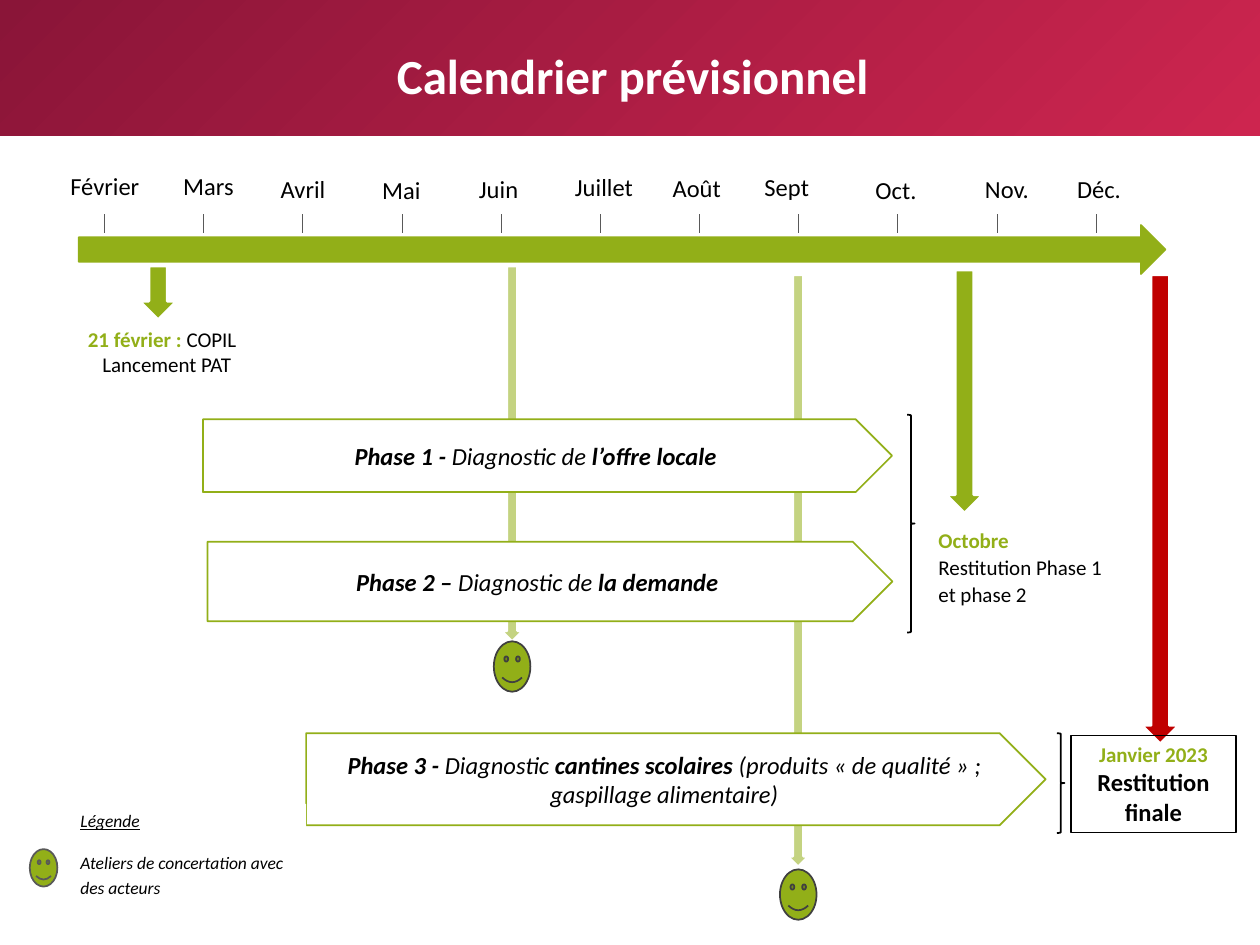
"""Build the project calendar slide with its timeline, phases and milestones."""
from lxml.etree import SubElement
from pptx import Presentation
from pptx.dml.color import RGBColor
from pptx.enum.shapes import MSO_CONNECTOR, MSO_SHAPE
from pptx.enum.text import MSO_ANCHOR, PP_ALIGN
from pptx.oxml.ns import qn
from pptx.util import Pt

GREEN = RGBColor(0x92, 0xAF, 0x18)
RED = RGBColor(0xC0, 0x00, 0x00)
WINE = RGBColor(0x8A, 0x15, 0x38)
ROSE = RGBColor(0xCD, 0x25, 0x4F)
WHITE = RGBColor(0xFF, 0xFF, 0xFF)
BLACK = RGBColor(0x00, 0x00, 0x00)
DARK = RGBColor(0x40, 0x40, 0x40)
GREY = RGBColor(0x59, 0x59, 0x59)

LEFT, MID = PP_ALIGN.LEFT, PP_ALIGN.CENTER
BOLD, PLAIN = dict(bold=True), dict(bold=False)
STRONG, SOFT = dict(bold=True, italic=True), dict(italic=True)

MONTHS = [
    ("Février", 33.1, 94.3, 84.2), ("Mars", 97.2, 94.3, 43.9),
    ("Avril", 148.3, 95.8, 49.7), ("Mai", 203.8, 96.5, 51.1),
    ("Juin ", 257, 95.8, 59), ("Juillet ", 319, 95, 55.4),
    ("Août", 377.3, 95.5, 84.2), ("Sept", 429.8, 95, 84.2),
    ("Oct.", 493.2, 96.5, 84.2), ("Nov.", 555.8, 95.8, 84.2),
    ("Déc.", 608.4, 95.8, 84.2),
]
PHASES = [
    ((174.96, 419, 422.6, 52.6), [
        ("Phase 3 - ", STRONG), ("Diagnostic ", SOFT), ("cantines scolaires ", STRONG),
        ("(produits « de qualité » ; gaspillage alimentaire)", SOFT)]),
    ((116, 239.6, 393.8, 41.6), [
        ("Phase 1 - ", STRONG), ("Diagnostic de", SOFT), (" l’offre locale ", STRONG)]),
    ((118.6, 309.6, 391.4, 45.4), [
        ("Phase 2 – ", STRONG), ("Diagnostic de ", SOFT), ("la demande ", STRONG)]),
]
TRAILS = [(450, 157, 12.2, 338.4), (286.6, 152, 12.2, 214.6)]
DROPS = [(79.9, 152, 20.9, 30.6, GREEN), (540.7, 154.3, 20.9, 138.9, GREEN),
         (652.6, 157, 20.9, 268, RED)]
FACES = [(282.2, 366.5, 20.9, 28.8, DARK), (445.7, 496.8, 20.9, 28.8, DARK),
         (17, 485.2, 15.8, 21.4, GREY)]
BRACES = [(518.4, 237, 4.3, 124.4), (604, 419, 4.3, 57)]


def apply(target, values):
    """Set each named format value on the target."""
    for name, value in values.items():
        setattr(target, name, value)


def write(shape, paras, size, align=MID, anchor=MSO_ANCHOR.TOP):
    """Fill a shape with paragraphs given as lists of (text, format) runs."""
    frame = shape.text_frame
    apply(frame, dict(word_wrap=True, vertical_anchor=anchor))
    for place, runs in enumerate(paras):
        para = frame.add_paragraph() if place else frame.paragraphs[0]
        para.alignment = align
        for text, style in runs:
            if text == "\n":
                para.add_line_break()
                continue
            run = para.add_run()
            run.text = text
            values = dict(name="Calibri", size=Pt(size)) | style
            run.font.color.rgb = values.pop("color", BLACK)
            apply(run.font, values)
    return frame.paragraphs


def label(slide, box, paras, size, **extra):
    """Add a text box and return its paragraphs."""
    shape = slide.shapes.add_textbox(*map(Pt, box))
    return write(shape, paras, size, **extra)


def draw(slide, kind, box, fill=None, line=None, width=1):
    """Add a preset shape without a shadow."""
    shape = slide.shapes.add_shape(kind, *map(Pt, box))
    shape.shadow.inherit = False
    if fill is None:
        shape.fill.background()
    else:
        shape.fill.solid()
        shape.fill.fore_color.rgb = fill
    if line is None:
        shape.line.fill.background()
    else:
        shape.line.color.rgb = line
        shape.line.width = Pt(width)
    return shape


def banner(slide):
    """Add the gradient band at the top."""
    band = draw(slide, MSO_SHAPE.RECTANGLE, (0, 0, 720, 77.4))
    band.fill.gradient()
    band.fill.gradient_angle = 315
    for stop, place, color in zip(band.fill.gradient_stops, (0, 1), (WINE, ROSE)):
        stop.position = place
        stop.color.rgb = color


def trail(slide, box):
    """Add a pale translucent arrow."""
    shape = draw(slide, MSO_SHAPE.DOWN_ARROW, box, GREEN, WHITE, 1.5)
    color = shape.fill._xPr.find(qn("a:solidFill"))[0]
    SubElement(color, qn("a:alpha"), val="54000")


def tick(slide, left):
    """Add a month mark above the timeline."""
    line = slide.shapes.add_connector(
        MSO_CONNECTOR.STRAIGHT, Pt(left), Pt(122.4), Pt(left), Pt(133.2))
    line.line.color.rgb = GREY
    line.line.width = Pt(0.5)
    SubElement(line._element.spPr, qn("a:effectLst"))


def main():
    """Build and save the slide."""
    deck = Presentation()
    apply(deck, dict(slide_width=Pt(720), slide_height=Pt(540)))
    slide = deck.slides.add_slide(deck.slide_layouts[6])

    banner(slide)
    label(slide, (69.8, 19.4, 589.7, 46.8),
          [[("Calendrier prévisionnel ", dict(bold=True, color=WHITE))]], 28,
          anchor=MSO_ANCHOR.MIDDLE)
    for box in TRAILS:
        trail(slide, box)

    draw(slide, MSO_SHAPE.RIGHT_ARROW, (45, 128.6, 621, 28), GREEN, GREEN)
    for place, (name, left, top, width) in enumerate(MONTHS):
        tick(slide, 59.7 + 56.67 * place)
        label(slide, (left, top, width, 24.2), [[(name, {})]], 14,
              align=LEFT if width > 60 else MID)

    for box, runs in PHASES:
        plate = draw(slide, MSO_SHAPE.PENTAGON, box, WHITE, GREEN)
        write(plate, [runs], 14, anchor=MSO_ANCHOR.MIDDLE)
    for *box, color in DROPS:
        draw(slide, MSO_SHAPE.DOWN_ARROW, box, color, WHITE, 1.5)
    for box in BRACES:
        draw(slide, MSO_SHAPE.RIGHT_BRACE, box, line=BLACK)

    head = dict(bold=True, color=GREEN)
    label(slide, (37.4, 182.9, 115.9, 36),
          [[("21 février : ", head), ("COPIL  ", PLAIN)], [("Lancement PAT", PLAIN)]], 12)
    goal, = label(slide, (529.2, 294.5, 110.9, 58.3),
                  [[("Octobre", head), ("\n", {}), ("Restitution Phase 1 et phase 2", PLAIN)]],
                  12, align=LEFT, anchor=MSO_ANCHOR.MIDDLE)
    apply(goal, dict(line_spacing=1.07, space_after=Pt(8)))
    final = draw(slide, MSO_SHAPE.RECTANGLE, (612, 420.5, 94.3, 55.4), line=BLACK, width=0.75)
    write(final, [[("Janvier 2023", head | dict(size=Pt(12)))],
                  [("Restitution finale", BOLD)]], 14)

    key = draw(slide, MSO_SHAPE.RECTANGLE, (38.9, 459.4, 136.1, 66.2), WHITE)
    note = write(key, [[("Légende", SOFT | dict(underline=True)), (" ", SOFT)],
                       [("Ateliers de concertation avec des acteurs", SOFT),
                        (" ", SOFT | dict(size=Pt(12)))]], 10, align=LEFT)
    note[1].space_before = Pt(12)
    for *box, color in FACES:
        draw(slide, MSO_SHAPE.SMILEY_FACE, box, GREEN, color)

    deck.save("out.pptx")


if __name__ == "__main__":
    main()
